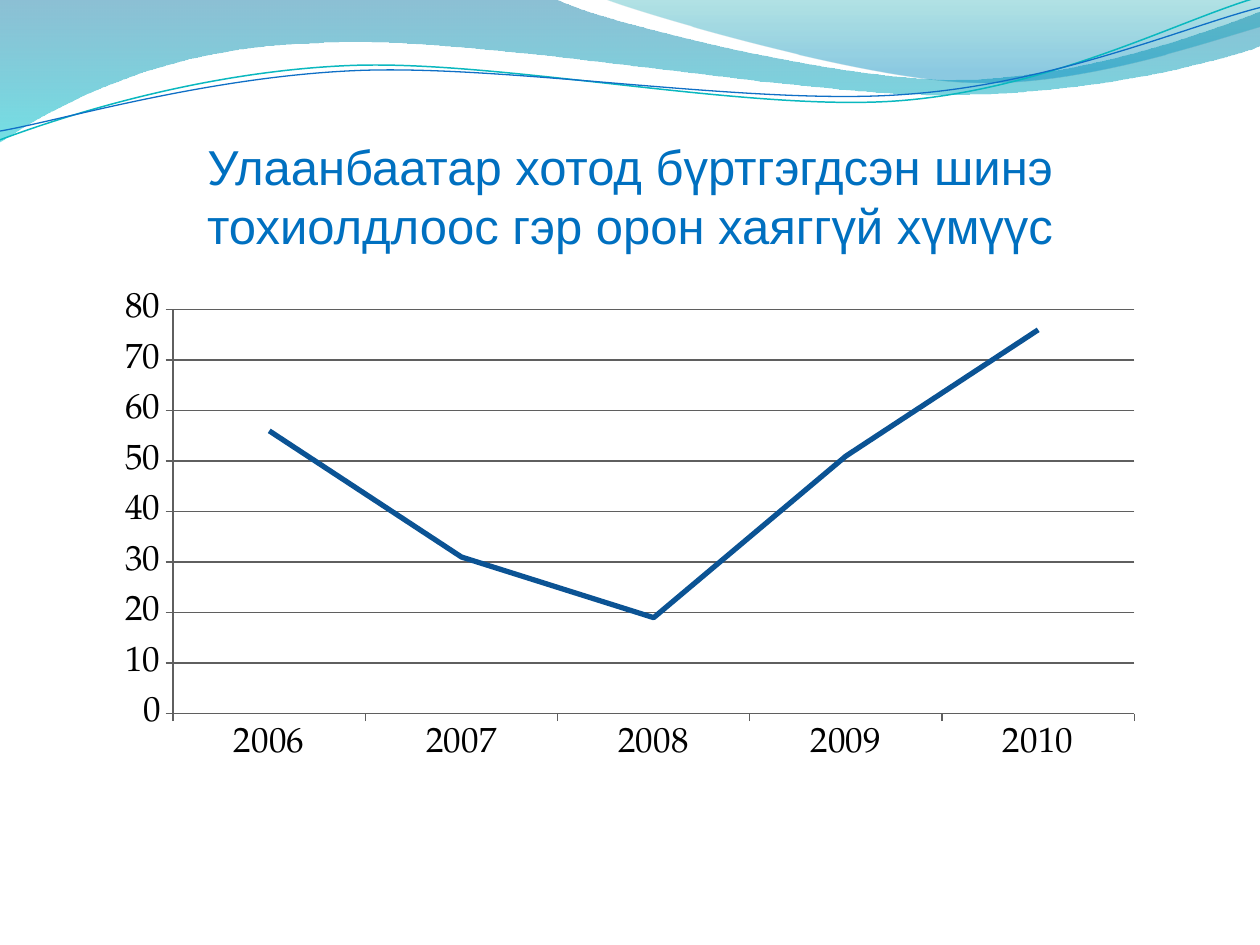
from dataclasses import dataclass
from math import cos, radians, sin

from lxml.etree import SubElement
from pptx import Presentation
from pptx.chart.data import CategoryChartData
from pptx.dml.color import RGBColor
from pptx.enum.chart import XL_CHART_TYPE as ChartType, XL_MARKER_STYLE as Marker
from pptx.enum.chart import XL_TICK_MARK as Tick
from pptx.enum.text import MSO_ANCHOR as Anchor, MSO_AUTO_SIZE as AutoSize, PP_ALIGN as Align
from pptx.oxml.ns import qn
from pptx.util import Inches, Pt


@dataclass(frozen=True)
class Theme:
    title: str = "0070C0"
    text: str = "000000"
    series: str = "0F6FC6"
    grid: str = "5F5F5F"
    title_font: str = "Arial"
    chart_font: str = "TeX Gyre Pagella"
    title_size: int = 28
    chart_size: int = 20


THEME = Theme()
WIDTH, HEIGHT = 10, 7.5

TITLE = "Улаанбаатар хотод бүртгэгдсэн шинэ тохиолдлоос гэр орон хаяггүй хүмүүс"
TITLE_BOX = (0.5, 0.77, 9, 1.25)

CASES = {"2006": 56, "2007": 31, "2008": 19, "2009": 51, "2010": 76}
CHART_BOX = (0.5, 2.25, 8.83, 4.08)
PLOT_SHARES = {"x": 0.099, "y": 0.051, "w": 0.864, "h": 0.786}

# Each segment holds one end point (line) or two controls and an end point (curve).
# Gradient stops are (position, colour, opacity in percent).
WAVES = [
    {"start": (0, 0), "stops": [(0, "0074A1", 45), (1, "00C6CF", 55)], "segments": [
        [(4.4, -0.01)],
        [(4.76, 0.17), (6.64, 0.63), (7.58, 0.63)],
        [(8.53, 0.63), (9.58, 0.26), (10, 0.09)],
        [(10.01, 0.36)],
        [(9.83, 0.44), (8.7, 0.76), (7.46, 0.75)],
        [(6.22, 0.75), (3.82, 0.28), (2.57, 0.34)],
        [(1.29, 0.36), (0.46, 0.83), (-0.01, 1.13)],
        [(0, 0)]]},
    {"start": (4.79, -0.01), "stops": [(0, "00A1A9", 30), (0.8, "008BBF", 45)], "segments": [
        [(5.09, 0.11), (6.82, 0.62), (7.69, 0.65)],
        [(8.56, 0.69), (9.61, 0.32), (10, 0.21)],
        [(10, 0)],
        [(4.79, -0.01)]]},
]
STRANDS = [
    {"start": (0, 1.11), "line": ("0AB8BF", 0.85), "segments": [
        [(0.48, 0.93), (1.58, 0.57), (2.77, 0.52)],
        [(3.95, 0.47), (5.93, 0.89), (7.13, 0.8)],
        [(8.33, 0.71), (9.38, 0.15), (9.98, -0.02)]]},
    {"start": (0, 1.04), "line": ("0F6FC6", 0.75), "segments": [
        [(0.47, 0.96), (1.64, 0.61), (2.83, 0.56)],
        [(4.03, 0.51), (5.97, 0.84), (7.17, 0.75)],
        [(8.36, 0.67), (9.41, 0.21), (10, 0.06)]]},
]
STRAND_TILT = -2.7
STRAND_CENTRE = (4.99, 0.58)


def rgb(code):
    return RGBColor.from_string(code)


def inches(values):
    return [Inches(value) for value in values]


def turn(point, degrees, centre):
    angle = radians(degrees)
    x, y = point[0] - centre[0], point[1] - centre[1]
    return (centre[0] + x * cos(angle) - y * sin(angle),
            centre[1] + x * sin(angle) + y * cos(angle))


def bend(shape, segments):
    """Join the straight steps of each three-point segment into one cubic curve."""
    steps = iter(list(shape._element.iter(qn("a:lnTo"))))
    for segment in segments:
        group = [next(steps) for _ in segment]
        if len(group) == 1:
            continue
        path = group[0].getparent()
        curve = SubElement(path, qn("a:cubicBezTo"))
        group[0].addprevious(curve)
        for step in group:
            curve.append(step[0])
            path.remove(step)


def fill_gradient(shape, stops):
    shape.fill.gradient()
    shape.fill.gradient_angle = 270
    for stop, (position, colour, _) in zip(shape.fill.gradient_stops, stops):
        stop.position = position
        stop.color.rgb = rgb(colour)
    tints = shape._element.spPr.iter(qn("a:srgbClr"))
    for tint, (_, _, opacity) in zip(tints, stops):
        SubElement(tint, qn("a:alpha"), val=str(opacity * 1000))


def add_wave(page, start, segments, stops=None, line=None, tilt=0):
    points = [start, *(point for segment in segments for point in segment)]
    level = [inches(turn(point, -tilt, STRAND_CENTRE)) for point in points]
    builder = page.shapes.build_freeform(*level[0], scale=1.0)
    builder.add_line_segments(level[1:], close=stops is not None)
    wave = builder.convert_to_shape()
    bend(wave, segments)
    wave.rotation = tilt
    wave.shadow.inherit = False
    if stops:
        fill_gradient(wave, stops)
        wave.line.fill.background()
    else:
        colour, width = line
        wave.fill.background()
        wave.line.color.rgb = rgb(colour)
        wave.line.width = Pt(width)
    return wave


def place_title(page, text, box):
    title = page.shapes.title
    title.left, title.top, title.width, title.height = inches(box)
    page.shapes._spTree.append(title._element)  # in front of the waves
    frame = title.text_frame
    frame.text = text
    frame.word_wrap = True
    frame.auto_size = AutoSize.NONE
    frame.vertical_anchor = Anchor.BOTTOM
    frame.margin_left = frame.margin_right = frame.margin_bottom = 0
    frame.margin_top = Inches(0.05)
    para = frame.paragraphs[0]
    para.alignment = Align.CENTER
    font = para.runs[0].font
    font.name, font.size = THEME.title_font, Pt(THEME.title_size)
    font.color.rgb = rgb(THEME.title)


def set_plot_layout(chart, shares):
    area = chart._chartSpace.chart.plotArea
    layout = area.find(qn("c:layout"))
    if layout is None:
        layout = SubElement(area, qn("c:layout"))
        area.insert(0, layout)
    manual = SubElement(layout, qn("c:manualLayout"))
    settings = {"layoutTarget": "inner", "xMode": "edge", "yMode": "edge", **shares}
    for name, value in settings.items():
        SubElement(manual, qn(f"c:{name}"), val=str(value))


def add_case_chart(page, cases, box):
    data = CategoryChartData()
    data.categories = list(cases)
    data.add_series("Series 1", list(cases.values()))
    chart = page.shapes.add_chart(ChartType.LINE_STACKED, *inches(box), data).chart
    chart.has_legend = chart.has_title = False
    chart.font.name, chart.font.size = THEME.chart_font, Pt(THEME.chart_size)
    chart.font.color.rgb = rgb(THEME.text)
    set_plot_layout(chart, PLOT_SHARES)

    values = chart.value_axis
    values.has_major_gridlines = True
    for axis in (chart.category_axis, values):
        axis.major_tick_mark, axis.minor_tick_mark = Tick.OUTSIDE, Tick.NONE
    for part in (chart.category_axis, values, values.major_gridlines):
        part.format.line.color.rgb = rgb(THEME.grid)
        part.format.line.width = Pt(0.75)

    chart.plots[0].vary_by_categories = False
    series = chart.plots[0].series[0]
    series.smooth = False
    series.marker.style = Marker.NONE
    series.format.line.width = Pt(3)
    series.format.line.color.rgb = rgb(THEME.series)
    series.format.line.color.brightness = -0.25


def main():
    deck = Presentation()
    deck.slide_width, deck.slide_height = inches((WIDTH, HEIGHT))
    page = deck.slides.add_slide(deck.slide_layouts[5])
    for wave in WAVES:
        add_wave(page, **wave)
    page.shapes.add_group_shape([add_wave(page, tilt=STRAND_TILT, **strand) for strand in STRANDS])
    place_title(page, TITLE, TITLE_BOX)
    add_case_chart(page, CASES, CHART_BOX)
    deck.save("out.pptx")


if __name__ == "__main__":
    main()
